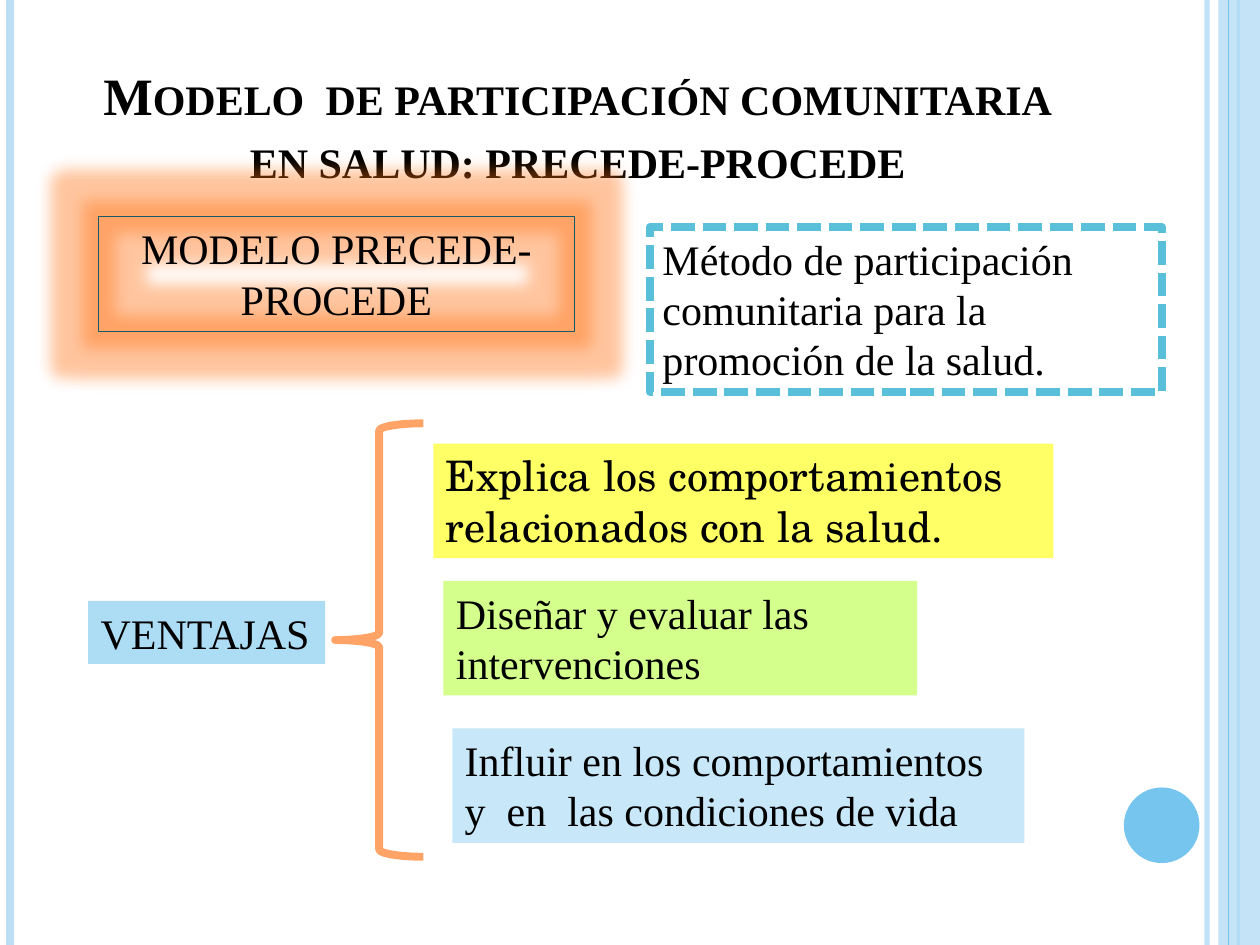
from pptx import Presentation, util as u
from pptx.dml.color import RGBColor
from pptx.enum import dml, shapes, text
from pptx.oxml.ns import qn
from lxml import etree

deck = Presentation()
deck.slide_width, deck.slide_height = u.Inches(10), u.Inches(7.5)
column, row = deck.slide_width / 100, deck.slide_height / 75
slide = deck.slides.add_slide(deck.slide_layouts[6])
kind = shapes.MSO_SHAPE
align = text.PP_ALIGN


def paint(target, color, opacity=100):
    target.solid()
    target.fore_color.rgb = RGBColor.from_string(color)
    if opacity < 100:
        for tone in target._xPr.iter(qn("a:srgbClr")):
            etree.SubElement(tone, qn("a:alpha")).set("val", str(opacity * 1000))


def block(form, left, top, width, height, fill=None, line=None, weight=0, words="",
          font="Times New Roman", alignment=align.LEFT, opacity=100):
    part = slide.shapes.add_shape(form, round(left * column), round(top * row),
                                  round(width * column), round(height * row))
    part.shadow.inherit = False
    if fill:
        paint(part.fill, fill, opacity)
    else:
        part.fill.background()
    if line:
        paint(part.line.fill, line)
        part.line.width = u.Pt(weight)
    else:
        part.line.fill.background()
    if words:
        part.text_frame.word_wrap = True
        part.text_frame.vertical_anchor = text.MSO_ANCHOR.TOP
        paragraph = part.text_frame.paragraphs[0]
        paragraph.text = words
        paragraph.alignment = alignment
        paragraph.font.name = font
        paragraph.font.size = u.Pt(24)
        paint(paragraph.font.fill, "000000")
    return part


stripes = [(95.8, "BDDFF6", 3, 93), (0.8, "BDDFF6", 4.5, 100),
           (98.3, "76C5EF", 1.5, 100), (97.5, "76C5EF", 0.75, 100)]
for position, color, weight, opacity in stripes:
    if position == 97.5:
        block(kind.RECTANGLE, 96.7, 0, 3.3, 75, "BDDFF6", opacity=87)
    stripe = slide.shapes.add_connector(shapes.MSO_CONNECTOR.STRAIGHT, round(position * column), 0,
                                        round(position * column), deck.slide_height)
    paint(stripe.line.fill, color, opacity)
    stripe.line.width = u.Pt(weight)
    etree.SubElement(stripe._element.spPr, qn("a:effectLst"))
block(kind.OVAL, 89.2, 62.5, 6, 6, "76C5EF")

title = slide.shapes.add_textbox(round(5 * column), round(3 * row),
                                 round(81.7 * column), round(12.5 * row))
title.text_frame.word_wrap = True
title.text_frame.vertical_anchor = text.MSO_ANCHOR.BOTTOM
heading = title.text_frame.paragraphs[0]
heading.text = "Modelo  de participación comunitaria en salud: precede-procede"
heading.alignment = align.CENTER
heading.font.name = "Times New Roman"
heading.font.size = u.Pt(30)
heading.font.bold = True
paint(heading.font.fill, "000000")
heading.runs[0].font._element.set("cap", "small")

model = block(kind.RECTANGLE, 7.8, 17.2, 37.8, 9.1, line="185869", weight=0.75,
              words="MODELO PRECEDE-PROCEDE", alignment=align.CENTER)
effects = model._element.spPr.find(qn("a:effectLst"))
glow = etree.SubElement(effects, qn("a:glow"), rad=str(u.Pt(18)))
glow_color = etree.SubElement(glow, qn("a:srgbClr"), val="FF7011")
etree.SubElement(glow_color, qn("a:alpha"), val="40000")

method = block(kind.RECTANGLE, 51.6, 18, 40.6, 13.1, line="5ABFD9", weight=4.5,
               words="Método de participación comunitaria para la promoción de la salud.")
method.line.dash_style = dml.MSO_LINE.SQUARE_DOT
method.line._ln.find(qn("a:prstDash")).set("val", "sysDash")

advantages = block(kind.RECTANGLE, 7, 47.7, 18.8, 5, "ADDCF5", words="VENTAJAS")
advantages.text_frame.word_wrap = False

benefits = [
    (34.4, 35.2, 49.2, "FFFF66", "TeX Gyre Schola",
     "Explica los comportamientos relacionados con la salud."),
    (35.2, 46.1, 37.6, "D4FF8D", "Times New Roman", "Diseñar y evaluar las intervenciones"),
    (35.9, 57.8, 45.4, "C8E8F9", "Times New Roman",
     "Influir en los comportamientos  y  en  las condiciones de vida"),
]
for left, top, width, color, font, words in benefits:
    block(kind.RECTANGLE, left, top, width, 9.1, color, words=words, font=font)

block(kind.LEFT_BRACE, 26.6, 33.6, 7, 34.4, line="FFA466", weight=4.5)

deck.save("out.pptx")
